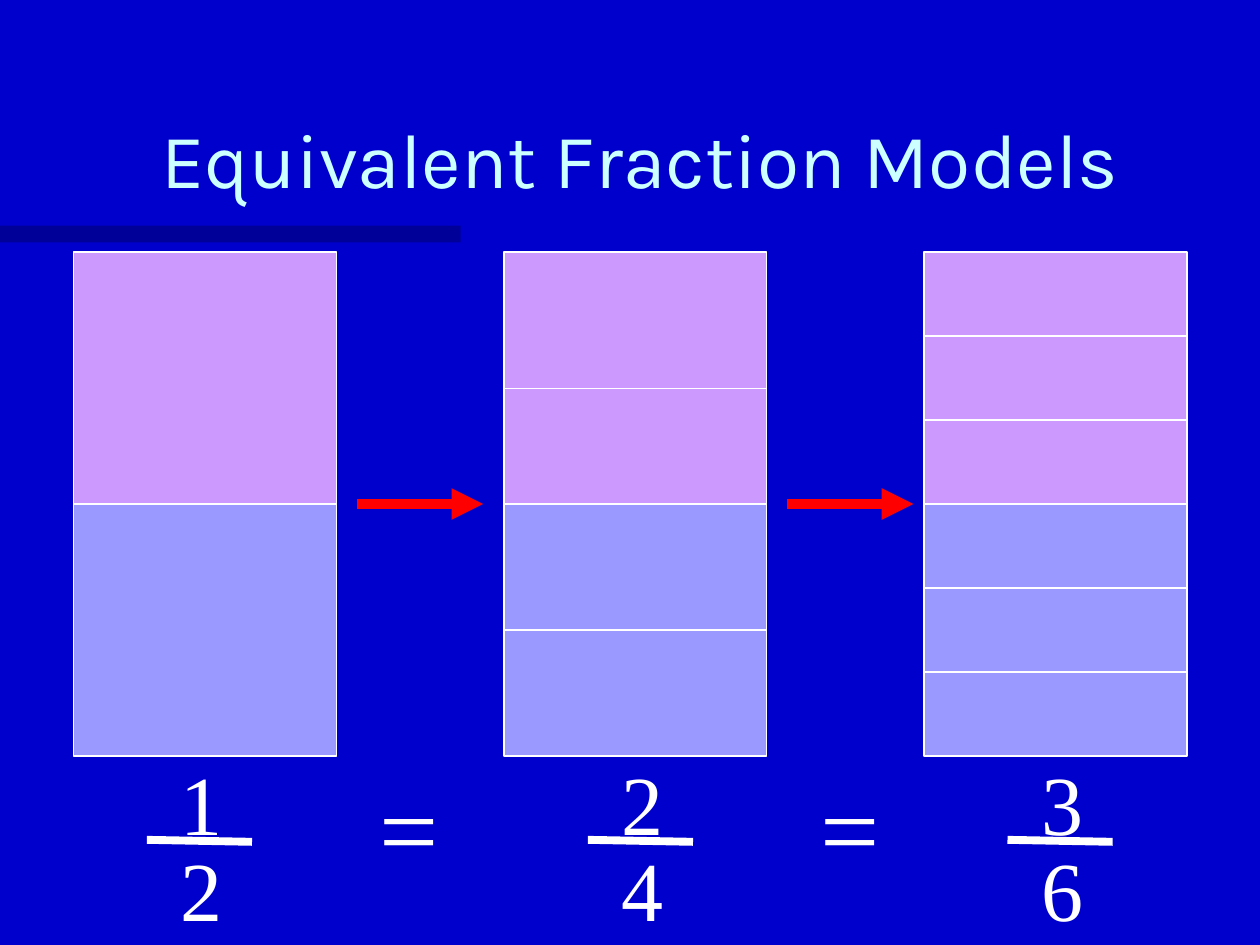
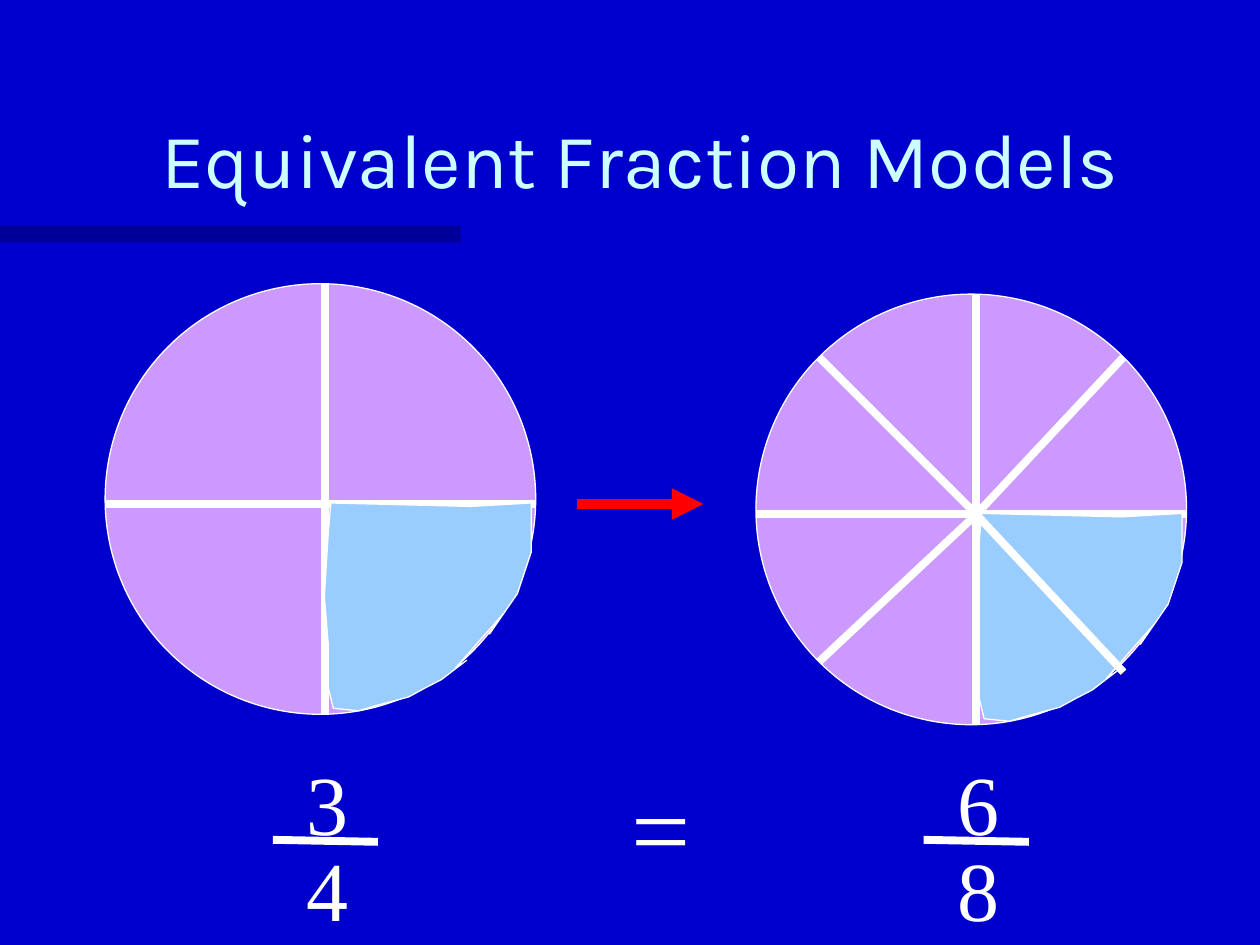
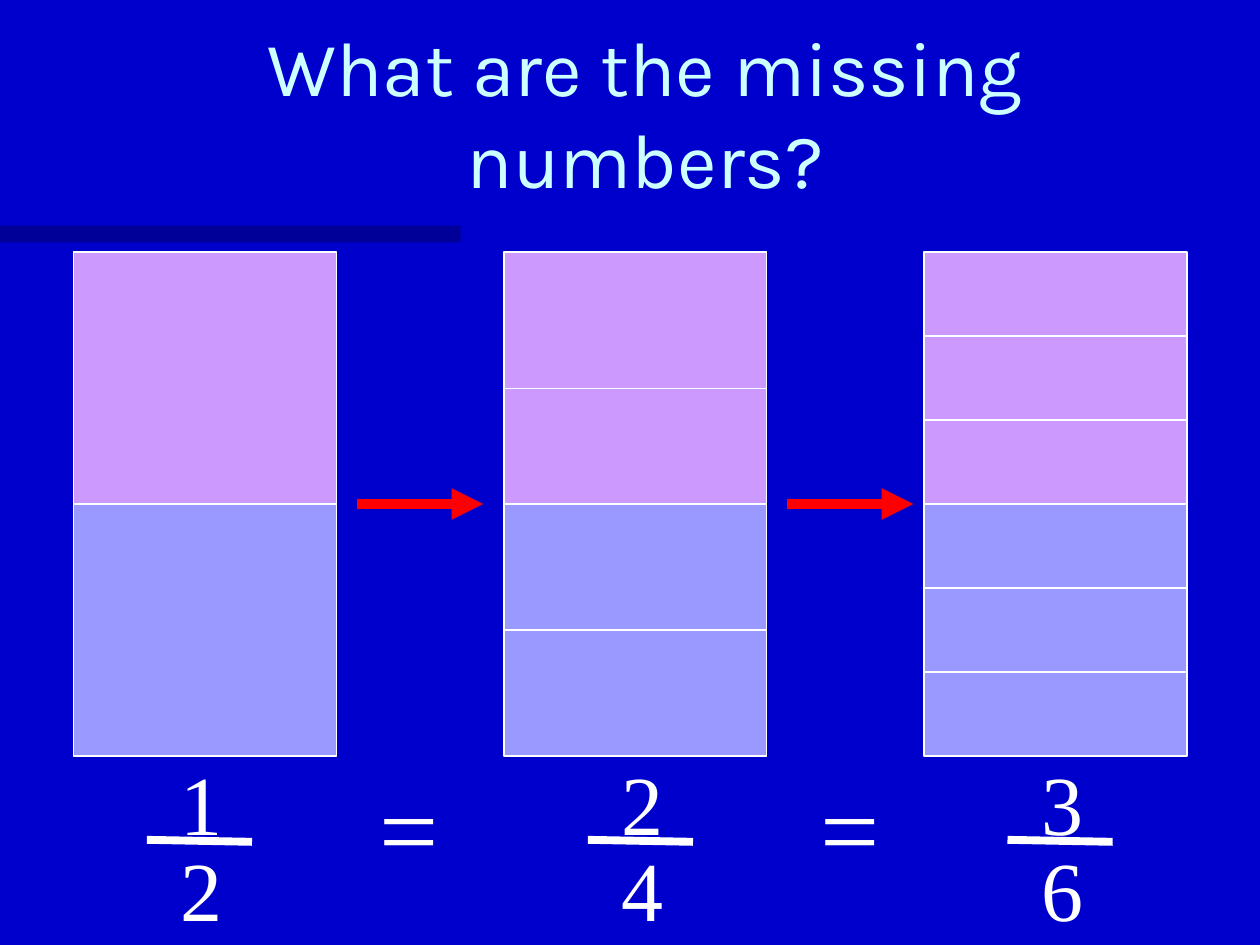
from pptx import Presentation
from pptx.dml.color import RGBColor
from pptx.enum.shapes import MSO_CONNECTOR, MSO_SHAPE
from pptx.enum.text import MSO_ANCHOR, MSO_AUTO_SIZE, PP_ALIGN
from pptx.oxml.ns import qn
from pptx.util import Cm, Pt
from lxml import etree

RECT, OVAL = MSO_SHAPE.RECTANGLE, MSO_SHAPE.OVAL
LINE = MSO_CONNECTOR.STRAIGHT
BOTTOM, TOP = MSO_ANCHOR.BOTTOM, MSO_ANCHOR.TOP
CENTER, LEFT = PP_ALIGN.CENTER, PP_ALIGN.LEFT
FIT, FIXED = MSO_AUTO_SIZE.SHAPE_TO_FIT_TEXT, MSO_AUTO_SIZE.NONE

HEX = {"back": "0000CC", "band": "000066", "title": "CCFFFF", "white": "FFFFFF",
       "pink": "CC99FF", "blue": "9999FF", "sky": "99CCFF", "red": "FF0000"}
RGB = {name: RGBColor.from_string(code) for name, code in HEX.items()}

# Text styles: font, color, frame and paragraph settings
SERIF = {"color": "white", "align": LEFT,
         "frame": {"word_wrap": False, "auto_size": FIT, "vertical_anchor": TOP}}
STYLES = {
    "title": {"font": {"name": "Karla", "size": Pt(44)}, "color": "title", "align": CENTER,
              "frame": {"word_wrap": True, "auto_size": FIXED, "vertical_anchor": BOTTOM}},
    "digit": {"font": {"name": "Times New Roman", "size": Pt(48)}, **SERIF},
    "equal": {"font": {"name": "Times New Roman", "size": Pt(60)}, **SERIF},
}

# Slides: title, its left and width, fractions by left, equal signs, arrows, model
BARS = ([("1", "2", 3.39), ("2", "4", 12.28), ("3", "6", 20.74)],
        [7.41, 16.3], [7.2, 15.87], "bars")
PIES = ([("3", "4", 5.93), ("6", "8", 19.05)], [12.49], [11.64], "pies")
PAGES = [
    ("Equivalent Fraction Models", 2.12, 21.59, *BARS),
    ("Equivalent Fraction Models", 2.12, 21.59, *PIES),
    ("What are the missing numbers?", 1.48, 23.07, *BARS),
]

# Bar models: left and heights of the thin dividers
MID, HALF, WIDE = 10.16, 5.08, 5.3
COLS = [(1.48, []), (10.16, [7.83, MID + HALF / 2]),
        (18.63, [MID + HALF * n / 3 for n in (-2, -1, 1, 2)])]

# Pie models: left, top and ends of the slanted cuts
SIZE, HUB = 8.68, 4.44
ROUNDS = [(2.12, 5.72, []),
          (15.24, 5.93, [(1.27, 1.27), (7.41, 1.27), (1.27, 7.41), (7.41, 7.62)])]

# Outline of the quarter piece, from the pie's corner
EDGE = [(4.55, 4.42), (4.5, 5), (4.42, 6.3), (4.5, 7.29), (4.5, 8.15), (4.6, 8.56),
        (5.11, 8.61), (5.44, 8.51), (6.12, 8.33), (6.45, 8.15), (6.78, 7.98),
        (7.29, 7.59), (7.06, 7.75), (8.03, 6.65), (7.75, 7.06), (8.31, 6.25),
        (8.59, 5.41), (8.59, 4.42), (7.37, 4.49)]


def paint(shape, fill):
    """Give a shape a flat fill and a thin white outline."""
    shape.shadow.inherit = False
    shape.fill.solid()
    shape.fill.fore_color.rgb = RGB[fill]
    shape.line.color.rgb = RGB["white"]
    shape.line.width = Pt(0.75)
    return shape


def rule(slide, x1, y1, x2, y2, width, color="white"):
    """Draw a straight line without a shadow."""
    line = slide.shapes.add_connector(LINE, Cm(x1), Cm(y1), Cm(x2), Cm(y2))
    line.line.color.rgb = RGB[color]
    line.line.width = Pt(width)
    etree.SubElement(line._element.spPr, qn("a:effectLst"))
    return line


prs = Presentation()
prs.slide_width, prs.slide_height = Cm(25.4), Cm(19.05)
ground = prs.slide_master.background.fill
ground.solid()
ground.fore_color.rgb = RGB["back"]

for title, left, wide, parts, signs, heads, model in PAGES:
    slide = prs.slides.add_slide(prs.slide_layouts[6])
    shapes = slide.shapes

    # Half-clear band under the title
    band = paint(shapes.add_shape(RECT, 0, Cm(4.55), Cm(9.29), Cm(0.34)), "band")
    band.line.fill.background()
    tint = band._element.spPr.find(qn("a:solidFill"))[0]
    etree.SubElement(tint, qn("a:alpha"), val="50000")

    # Title, fractions and equal signs
    texts = [(title, "title", left, 1.06, wide, 3.18)]
    for top, low, x in parts:
        rule(slide, x - 0.43, 16.93, x + 1.69, 16.97, 4.5)
        texts += [(top, "digit", x, 15.03, 1.35, 2.29), (low, "digit", x, 16.76, 1.35, 2.29)]
    texts += [("=", "equal", x, 15.24, 1.69, 2.79) for x in signs]
    for words, kind, x, y, w, h in texts:
        style = STYLES[kind]
        frame = shapes.add_textbox(Cm(x), Cm(y), Cm(w), Cm(h)).text_frame
        for key, value in style["frame"].items():
            setattr(frame, key, value)
        para = frame.paragraphs[0]
        para.alignment = style["align"]
        run = para.add_run()
        run.text = words
        for key, value in style["font"].items():
            setattr(run.font, key, value)
        run.font.color.rgb = RGB[style["color"]]

    # Bar models
    if model == "bars":
        for x, cuts in COLS:
            for y, fill in ((MID - HALF, "pink"), (MID, "blue")):
                block = paint(shapes.add_shape(RECT, Cm(x), Cm(y), Cm(WIDE), Cm(HALF)), fill)
            for y in cuts:
                cut = rule(slide, x, y, x + WIDE, y, 0.75)
                if y == MID + HALF / 2:
                    cut.begin_connect(block, 1)
                    cut.end_connect(block, 3)

    # Pie models
    if model == "pies":
        for x, y, ends in ROUNDS:
            paint(shapes.add_shape(OVAL, Cm(x), Cm(y), Cm(SIZE), Cm(SIZE)), "pink")
            post = (x + HUB, y, x + HUB, y + SIZE, 4.5)
            if not ends:
                rule(slide, *post)
            rule(slide, x, y + HUB, x + SIZE, y + HUB, 4.5)
            spots = [(Cm(x + dx), Cm(y + dy)) for dx, dy in EDGE]
            piece = shapes.build_freeform(*spots[0])
            piece.add_line_segments(spots[1:], close=True)
            paint(piece.convert_to_shape(), "sky")
            for dx, dy in ends:
                rule(slide, x + dx, y + dy, x + HUB, y + HUB, 4.5)
            if ends:
                rule(slide, *post)

    # Arrows between models
    for x in heads:
        arrow = rule(slide, x, MID, x + 2.54, MID, 6, "red")
        etree.SubElement(arrow.line._get_or_add_ln(), qn("a:tailEnd"), type="triangle")

prs.save("out.pptx")
